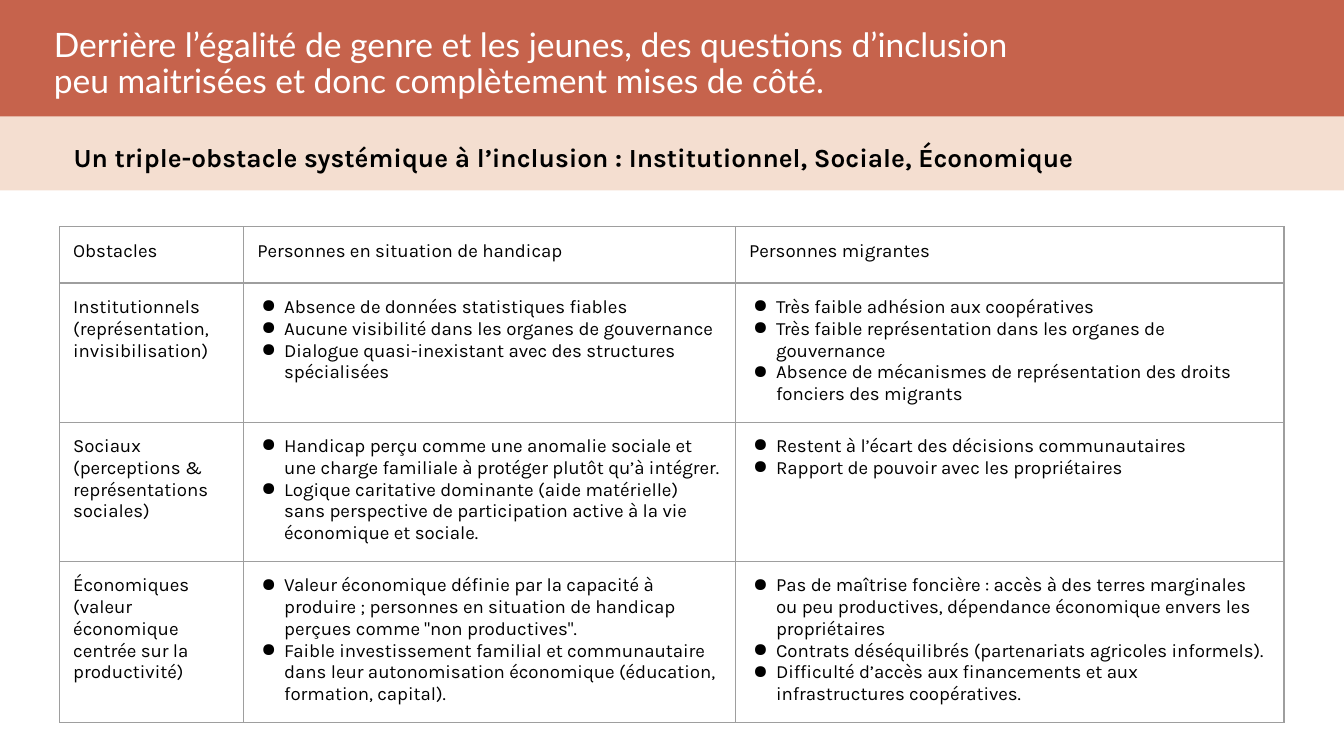
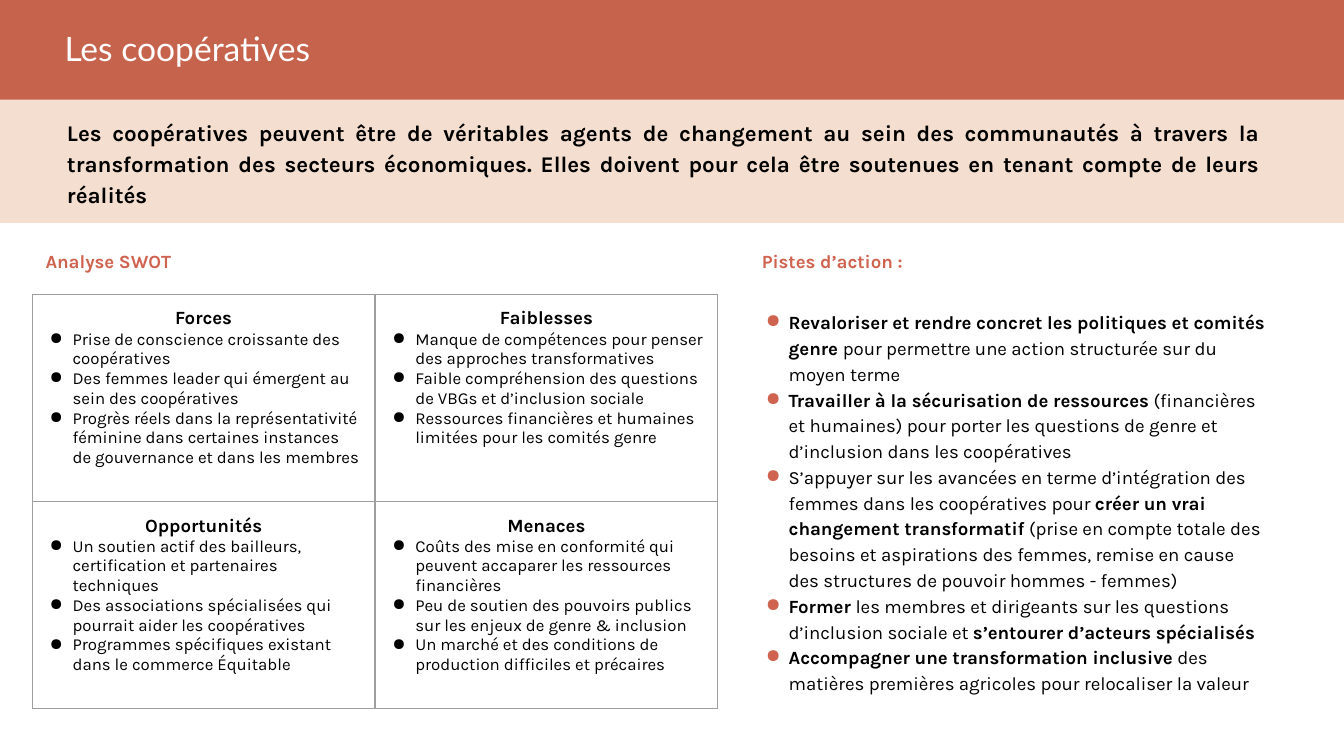
from dataclasses import dataclass, replace
from typing import Optional, Sequence

from lxml import etree
from pptx import Presentation
from pptx.dml.color import RGBColor
from pptx.enum import shapes, text
from pptx.oxml import ns
from pptx import util as u


@dataclass(frozen=True)
class Theme:
    brick: str = "C6634C"
    peach: str = "E9BDA1"
    peach_opacity: int = 49
    accent: str = "D06350"
    ink: str = "000000"
    paper: str = "FFFFFF"
    rule: str = "9E9E9E"
    rule_width: float = 0.75
    title_font: str = "Lato"
    body_font: str = "Karla"
    title_size: int = 18
    lead_size: int = 14
    summary_size: int = 12
    body_size: int = 10
    small_size: int = 9
    inset: float = 0.1
    indent: float = 0.2
    hanging: float = 0.17
    loose: float = 1.15


THEME = Theme()
SLIDE_WIDTH = u.Inches(10)
SLIDE_HEIGHT = SLIDE_WIDTH * 9 // 16


@dataclass(frozen=True)
class Area:
    """A rectangle in percent of the slide's width and height."""
    left: float
    top: float
    width: float
    height: float

    def emu(self) -> tuple[int, int, int, int]:
        return across(self.left), down(self.top), across(self.width), down(self.height)


@dataclass(frozen=True)
class Style:
    size: int = THEME.body_size
    font: str = THEME.body_font
    color: str = THEME.ink
    bold: bool = False
    align: text.PP_ALIGN = text.PP_ALIGN.LEFT
    spacing: Optional[float] = None
    bullet: Optional[str] = None


@dataclass(frozen=True)
class Para:
    """A paragraph; words between ** marks are bold."""
    words: str
    style: Style


@dataclass(frozen=True)
class Header:
    """The two bands at the top of a slide, with their texts."""
    title: str
    title_area: Area
    title_spacing: Optional[float]
    brick_height: float
    lead: Para
    lead_area: Area
    peach_height: float


BODY = Style()
BULLET = Style(bullet=THEME.ink)
SMALL_BULLET = replace(BULLET, size=THEME.small_size)
CELL_HEADING = Style(bold=True, align=text.PP_ALIGN.CENTER)
LABEL = Style(color=THEME.accent, bold=True, spacing=THEME.loose)
ACTION = Style(bullet=THEME.accent, spacing=THEME.loose)
TITLE = Style(size=THEME.title_size, font=THEME.title_font, color=THEME.paper)
LEAD = Style(size=THEME.lead_size, bold=True)
SUMMARY = Style(size=THEME.summary_size, bold=True,
                align=text.PP_ALIGN.JUSTIFY, spacing=THEME.loose)

Cell = list[Para]


def across(percent: float) -> int:
    return round(SLIDE_WIDTH * percent / 100)


def down(percent: float) -> int:
    return round(SLIDE_HEIGHT * percent / 100)


def paras(style: Style, *lines: str) -> Cell:
    return [Para(line, style) for line in lines]


def add_xml(parent, tag: str, **attributes: str):
    return etree.SubElement(parent, ns.qn(tag), attributes)


def add_bullet(paragraph, color: str) -> None:
    properties = paragraph._p.get_or_add_pPr()
    properties.set("marL", str(u.Inches(THEME.indent)))
    properties.set("indent", str(-u.Inches(THEME.hanging)))
    add_xml(add_xml(properties, "a:buClr"), "a:srgbClr", val=color)
    add_xml(properties, "a:buChar", char="●")


def write(frame, content: Sequence[Para]) -> None:
    for index, para in enumerate(content):
        style = para.style
        paragraph = frame.paragraphs[0] if index == 0 else frame.add_paragraph()
        if style.bullet:
            add_bullet(paragraph, style.bullet)
        paragraph.alignment = style.align
        if style.spacing:
            paragraph.line_spacing = style.spacing
        for position, words in enumerate(para.words.split("**")):
            if not words:
                continue
            span = paragraph.add_run()
            span.text = words
            span.font.name = style.font
            span.font.size = u.Pt(style.size)
            span.font.bold = style.bold or position % 2 == 1
            span.font.color.rgb = RGBColor.from_string(style.color)


def fill_box(box, area: Area, content: Sequence[Para]) -> None:
    box.left, box.top, box.width, box.height = area.emu()
    frame = box.text_frame
    frame.word_wrap = True
    frame.auto_size = text.MSO_AUTO_SIZE.SHAPE_TO_FIT_TEXT
    frame.vertical_anchor = text.MSO_ANCHOR.TOP
    frame.margin_left = frame.margin_right = u.Inches(THEME.inset)
    frame.margin_top = frame.margin_bottom = u.Inches(THEME.inset)
    write(frame, content)


def add_text(page, area: Area, content: Sequence[Para]) -> None:
    fill_box(page.shapes.add_textbox(*area.emu()), area, content)


def add_band(page, height: float, color: str, opacity: int = 100) -> None:
    band = page.shapes.add_shape(shapes.MSO_SHAPE.RECTANGLE, *Area(0, 0, 100, height).emu())
    band.shadow.inherit = False
    band.line.fill.background()
    band.fill.solid()
    band.fill.fore_color.rgb = RGBColor.from_string(color)
    if opacity < 100:
        tint = band.element.spPr.find(".//" + ns.qn("a:srgbClr"))
        add_xml(tint, "a:alpha", val=str(opacity * 1000))


def add_page(deck, header: Header):
    page = deck.slides.add_slide(deck.slide_layouts[5])
    add_band(page, header.peach_height, THEME.peach, THEME.peach_opacity)
    add_band(page, header.brick_height, THEME.brick)
    title = page.shapes.title
    title.element.getparent().append(title.element)  # in front of the bands
    fill_box(title, header.title_area,
             [Para(header.title, replace(TITLE, spacing=header.title_spacing))])
    add_text(page, header.lead_area, [header.lead])
    return page


def add_borders(cell) -> None:
    properties = cell._tc.get_or_add_tcPr()
    for side in ("a:lnL", "a:lnR", "a:lnT", "a:lnB"):
        line = add_xml(properties, side, w=str(u.Pt(THEME.rule_width)))
        add_xml(add_xml(line, "a:solidFill"), "a:srgbClr", val=THEME.rule)


def add_grid(page, left: float, top: float, widths: Sequence[float],
             heights: Sequence[float], rows: Sequence[Sequence[Cell]]) -> None:
    area = Area(left, top, sum(widths), sum(heights))
    table = page.shapes.add_table(len(heights), len(widths), *area.emu()).table
    table.first_row = table.horz_banding = False
    for column, width in zip(table.columns, widths):
        column.width = across(width)
    for row, height, contents in zip(table.rows, heights, rows):
        row.height = down(height)
        for cell, content in zip(row.cells, contents):
            cell.margin_left = cell.margin_right = u.Inches(THEME.inset)
            cell.margin_top = cell.margin_bottom = u.Inches(THEME.inset)
            add_borders(cell)
            cell.fill.background()
            write(cell.text_frame, content)


OBSTACLES_HEADER = Header(
    "Derrière l’égalité de genre et les jeunes, des questions d’inclusion peu maitrisées "
    "et donc complètement mises de côté.",
    Area(3, 1.96, 73.7, 13.3), 0.9, 15.4,
    Para("Un triple-obstacle systémique à l’inclusion : Institutionnel, Sociale, Économique", LEAD),
    Area(4.5, 16.9, 93, 7.8), 25.2)

OBSTACLES = [
    [paras(BODY, "Obstacles"),
     paras(BODY, "Personnes en situation de handicap"),
     paras(BODY, "Personnes migrantes")],
    [paras(BODY, "Institutionnels", "(représentation, invisibilisation)"),
     paras(BULLET,
           "Absence de données statistiques fiables",
           "Aucune visibilité dans les organes de gouvernance",
           "Dialogue quasi-inexistant avec des structures spécialisées"),
     paras(BULLET,
           "Très faible adhésion aux coopératives",
           "Très faible représentation dans les organes de gouvernance",
           "Absence de mécanismes de représentation des droits fonciers des migrants")],
    [paras(BODY, "Sociaux", "(perceptions & représentations sociales)"),
     paras(BULLET,
           "Handicap perçu comme une anomalie sociale et une charge familiale à protéger "
           "plutôt qu’à intégrer.",
           "Logique caritative dominante (aide matérielle) sans perspective de participation "
           "active à la vie économique et sociale."),
     paras(BULLET,
           "Restent à l’écart des décisions communautaires",
           "Rapport de pouvoir avec les propriétaires")],
    [paras(BODY, "Économiques", "(valeur économique centrée sur la productivité)"),
     paras(BULLET,
           "Valeur économique définie par la capacité à produire ; personnes en situation de "
           "handicap perçues comme \"non productives\".",
           "Faible investissement familial et communautaire dans leur autonomisation "
           "économique (éducation, formation, capital)."),
     paras(BULLET,
           "Pas de maîtrise foncière : accès à des terres marginales ou peu productives, "
           "dépendance économique envers les propriétaires",
           "Contrats déséquilibrés (partenariats agricoles informels).",
           "Difficulté d’accès aux financements et aux infrastructures coopératives.")],
]

COOPERATIVES_HEADER = Header(
    "Les coopératives",
    Area(3.8, 1.96, 89.5, 8.9), None, 13.2,
    Para("Les coopératives peuvent être de véritables agents de changement au sein des "
         "communautés à travers la transformation des secteurs économiques. Elles doivent pour "
         "cela être soutenues en tenant compte de leurs réalités", SUMMARY),
    Area(4, 13.5, 90.8, 15.5), 29.5)


def swot_cell(heading: str, *points: str) -> Cell:
    return paras(CELL_HEADING, heading) + paras(SMALL_BULLET, *points)


SWOT = [
    [swot_cell("Forces",
               "Prise de conscience croissante des coopératives",
               "Des femmes leader qui émergent au sein des coopératives",
               "Progrès réels dans la représentativité féminine dans certaines instances de "
               "gouvernance et dans les membres"),
     swot_cell("Faiblesses",
               "Manque de compétences pour penser des approches transformatives",
               "Faible compréhension des questions de VBGs et d’inclusion sociale",
               "Ressources financières et humaines limitées pour les comités genre")],
    [swot_cell("Opportunités",
               "Un soutien actif des bailleurs, certification et partenaires techniques",
               "Des associations spécialisées qui pourrait aider les coopératives",
               "Programmes spécifiques existant dans le commerce Équitable"),
     swot_cell("Menaces",
               "Coûts des mise en conformité qui peuvent accaparer les ressources financières",
               "Peu de soutien des pouvoirs publics sur les enjeux de genre & inclusion",
               "Un marché et des conditions de production difficiles et précaires")],
]

ACTIONS = paras(
    ACTION,
    "**Revaloriser et rendre concret les politiques et comités genre **pour permettre une "
    "action structurée sur du moyen terme",
    "**Travailler à la sécurisation de ressources **(financières et humaines) pour porter les "
    "questions de genre et d’inclusion dans les coopératives",
    "S’appuyer sur les avancées en terme d’intégration des femmes dans les coopératives pour "
    "**créer un vrai changement transformatif **(prise en compte totale des besoins et "
    "aspirations des femmes, remise en cause des structures de pouvoir hommes - femmes)",
    "**Former **les membres et dirigeants sur les questions d’inclusion sociale et "
    "**s’entourer d’acteurs spécialisés**",
    "**Accompagner une transformation inclusive **des matières premières agricoles pour "
    "relocaliser la valeur")


def build_obstacles(deck) -> None:
    page = add_page(deck, OBSTACLES_HEADER)
    add_grid(page, 4.45, 30, (13.7, 36.6, 40.8), (7.45, 17.95, 17.95, 20.8), OBSTACLES)


def build_cooperatives(deck) -> None:
    left, right, label_top, content_top = 2.4, 55.7, 30.95, 38.95
    page = add_page(deck, COOPERATIVES_HEADER)
    for start, label in ((left, "Analyse SWOT"), (right, "Pistes d’action :")):
        add_text(page, Area(start, label_top, 32.8, 6.6), paras(LABEL, label))
    add_grid(page, left, content_top, (25.5,) * 2, (27.4,) * 2, SWOT)
    add_text(page, Area(right, content_top, 39.6, 55.5), ACTIONS)


def main() -> None:
    deck = Presentation()
    deck.slide_width, deck.slide_height = SLIDE_WIDTH, SLIDE_HEIGHT
    build_obstacles(deck)
    build_cooperatives(deck)
    deck.save("out.pptx")


if __name__ == "__main__":
    main()
